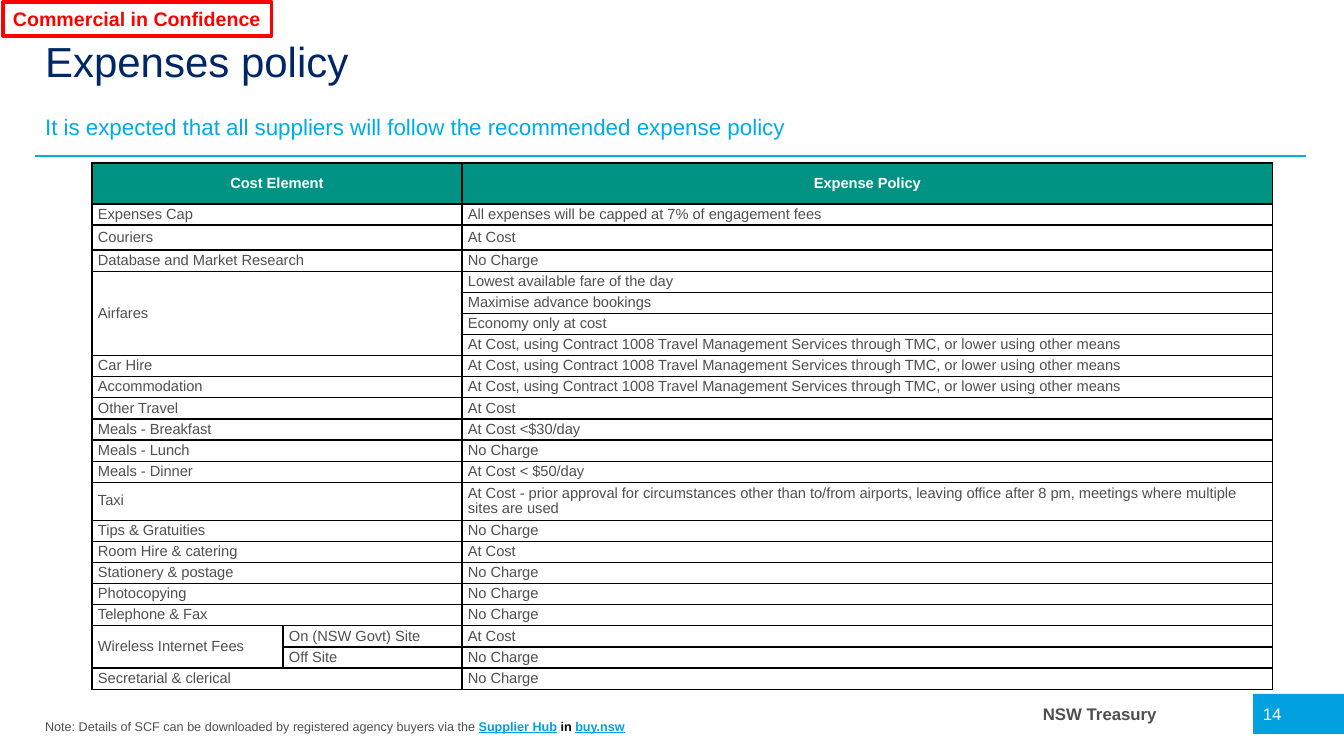
import pptx
import pptx.util
import pptx.dml.color
import pptx.enum.shapes
import pptx.enum.text
import pptx.oxml
import pptx.oxml.ns
from lxml import etree

PX = 914400 / 100.8
NAVY = pptx.dml.color.RGBColor(0x00, 0x26, 0x64)
SKY = pptx.dml.color.RGBColor(0x00, 0xAB, 0xE6)
BLUE = pptx.dml.color.RGBColor(0x00, 0xA1, 0xDE)
TEAL = pptx.dml.color.RGBColor(0x00, 0x93, 0x83)
GREY = pptx.dml.color.RGBColor(0x4F, 0x4F, 0x4F)
RED = pptx.dml.color.RGBColor(0xFF, 0x00, 0x00)
BLACK = pptx.dml.color.RGBColor(0x00, 0x00, 0x00)
WHITE = pptx.dml.color.RGBColor(0xFF, 0xFF, 0xFF)
TOP = pptx.enum.text.MSO_ANCHOR.TOP
MIDDLE = pptx.enum.text.MSO_ANCHOR.MIDDLE
LEFT = pptx.enum.text.PP_ALIGN.LEFT
CENTER = pptx.enum.text.PP_ALIGN.CENTER


def px(*lengths):
    return [pptx.util.Emu(round(length * PX)) for length in lengths]


def write(frame, text, size, color, bold=False, anchor=MIDDLE, align=LEFT):
    """Fill a text frame with one formatted paragraph and return it."""
    frame.text = text
    frame.vertical_anchor = anchor
    paragraph = frame.paragraphs[0]
    paragraph.alignment = align
    for run in paragraph.runs:
        run.font.name = "Arial"
        run.font.size = pptx.util.Pt(size)
        run.font.bold = bold
        run.font.color.rgb = color
    return paragraph


prs = pptx.Presentation()
prs.slide_width, prs.slide_height = px(1344, 756)
slide = prs.slides.add_slide(prs.slide_layouts[3])
title, subtitle, note = slide.placeholders

# Heading, subtitle and note
for holder, box in (
    (title, (35, 30, 1271, 126)),
    (subtitle, (35, 95, 1271, 61)),
    (note, (35, 706, 1006, 40)),
):
    holder.left, holder.top, holder.width, holder.height = px(*box)
    holder.text_frame.auto_size = pptx.enum.text.MSO_AUTO_SIZE.NONE

write(title.text_frame, "Expenses policy", 30, NAVY, anchor=TOP)
summary = write(
    subtitle.text_frame,
    "It is expected that all suppliers will follow the recommended expense policy",
    16, SKY,
)
summary.line_spacing = pptx.util.Pt(20)
remark = write(
    note.text_frame,
    "Note: Details of SCF can be downloaded by registered agency buyers via the ",
    9, GREY,
)
for words, color, underlined in (
    ("Supplier Hub", BLUE, True),
    (" in ", BLACK, False),
    ("buy.nsw", BLUE, True),
):
    run = remark.add_run()
    run.text = words
    run.font.name = "Arial"
    run.font.size = pptx.util.Pt(9)
    run.font.bold = True
    run.font.underline = underlined
    run.font.color.rgb = color
for paragraph in (summary, remark):
    paragraph.space_before = pptx.util.Pt(0)
    properties = paragraph._p.get_or_add_pPr()
    properties.set("marL", "0")
    properties.set("indent", "0")
    etree.SubElement(properties, pptx.oxml.ns.qn("a:buNone"))

# Rule under the subtitle
rule = slide.shapes.add_connector(
    pptx.enum.shapes.MSO_CONNECTOR.STRAIGHT, *px(35, 156, 1306, 156))
rule.line.color.rgb = SKY
rule.line.width = pptx.util.Pt(1)
etree.SubElement(rule._element.spPr, pptx.oxml.ns.qn("a:effectLst"))

# Expense table: cost element, site, policy; None continues the cell above
TRAVEL = ("At Cost, using Contract 1008 Travel Management Services through TMC, "
          "or lower using other means")
expenses = [
    ("Cost Element", "", "Expense Policy"),
    ("Expenses Cap", "", "All expenses will be capped at 7% of engagement fees"),
    ("Couriers", "", "At Cost"),
    ("Database and Market Research", "", "No Charge"),
    ("Airfares", "", "Lowest available fare of the day"),
    (None, "", "Maximise advance bookings"),
    (None, "", "Economy only at cost"),
    (None, "", TRAVEL),
    ("Car Hire", "", TRAVEL),
    ("Accommodation", "", TRAVEL),
    ("Other Travel", "", "At Cost"),
    ("Meals - Breakfast", "", "At Cost <$30/day"),
    ("Meals - Lunch", "", "No Charge"),
    ("Meals - Dinner", "", "At Cost < $50/day"),
    ("Taxi", "", "At Cost - prior approval for circumstances other than to/from airports, "
                 "leaving office after 8 pm, meetings where multiple sites are used"),
    ("Tips & Gratuities", "", "No Charge"),
    ("Room Hire & catering", "", "At Cost"),
    ("Stationery & postage", "", "No Charge"),
    ("Photocopying", "", "No Charge"),
    ("Telephone & Fax", "", "No Charge"),
    ("Wireless Internet Fees", "On (NSW Govt) Site", "At Cost"),
    (None, "Off Site", "No Charge"),
    ("Secretarial & clerical", "", "No Charge"),
]
special_heights = {0: 41, 2: 25, 14: 38}
table = slide.shapes.add_table(len(expenses), 3, *px(92, 163, 1181, 527)).table
table.first_row = table.horz_banding = False
for column, width in zip(table.columns, px(191, 179, 811)):
    column.width = width

for r, entry in enumerate(expenses):
    table.rows[r].height = px(special_heights.get(r, 21.15))[0]
    for c, text in enumerate(entry):
        cell = table.cell(r, c)
        cell.margin_left, cell.margin_right, cell.margin_top, cell.margin_bottom = px(6, 6, 2, 2)
        cell.vertical_anchor = MIDDLE
        heading = r == 0
        line = write(cell.text_frame, text or "", 10.5, WHITE if heading else GREY,
                     bold=heading, align=CENTER if heading else LEFT)
        line.line_spacing = 0.95
        line.font.size = pptx.util.Pt(10.5)
        for side in ("lnL", "lnR", "lnT", "lnB"):
            cell._tc.get_or_add_tcPr().append(pptx.oxml.parse_xml(
                f'<a:{side} {pptx.oxml.ns.nsdecls("a")} w="12700"><a:solidFill>'
                f'<a:srgbClr val="{BLACK}"/></a:solidFill></a:{side}>'))
        if heading:
            cell.fill.solid()
            cell.fill.fore_color.rgb = TEAL
        else:
            cell.fill.background()

for r, (element, site, policy) in enumerate(expenses):
    if element is None:
        continue
    last = r
    while last + 1 < len(expenses) and expenses[last + 1][0] is None:
        last += 1
    last_column = 0 if site else 1
    table.cell(r, 0).merge(table.cell(last, last_column))

# Footer and page number
footer = slide.shapes.add_textbox(*px(1033, 699, 180, 30))
write(footer.text_frame, "NSW Treasury", 12, GREY, bold=True, anchor=TOP)

page = slide.shapes.add_shape(
    pptx.enum.shapes.MSO_SHAPE.RECTANGLE, *px(1253, 694, 91, 40))
page.shadow.inherit = False
page.fill.solid()
page.fill.fore_color.rgb = BLUE
page.line.fill.background()
write(page.text_frame, "14", 12, WHITE)

# Confidentiality stamp
stamp = slide.shapes.add_shape(
    pptx.enum.shapes.MSO_SHAPE.RECTANGLE, *px(3, 2, 269, 34))
stamp.shadow.inherit = False
stamp.fill.background()
stamp.line.color.rgb = RED
stamp.line.width = pptx.util.Pt(2.25)
write(stamp.text_frame, "Commercial in Confidence", 14, RED, bold=True, anchor=TOP)
stamp.text_frame.word_wrap = False

prs.save("out.pptx")
